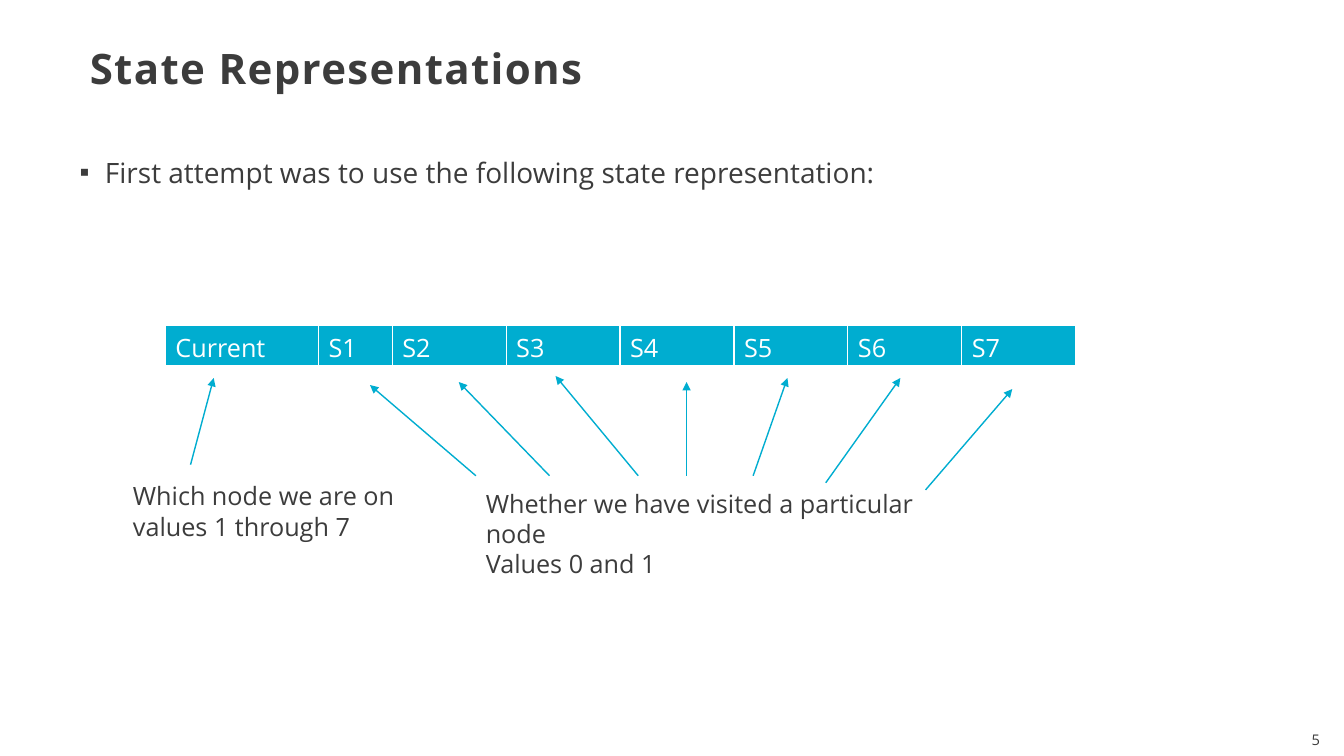
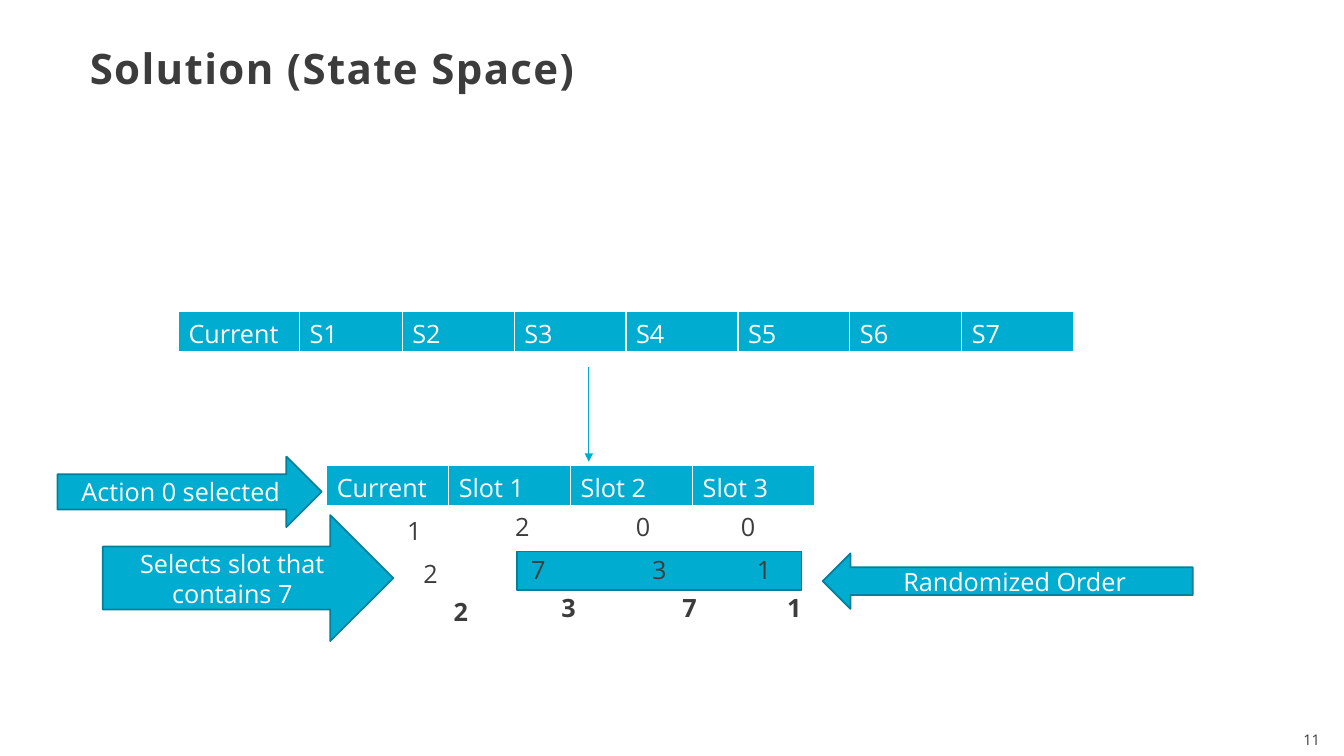
from collections import namedtuple
from dataclasses import dataclass

from lxml import etree
from pptx import Presentation
from pptx.dml.color import RGBColor
from pptx.enum.shapes import MSO_CONNECTOR, MSO_SHAPE
from pptx.enum.text import MSO_ANCHOR, MSO_AUTO_SIZE, PP_ALIGN
from pptx.oxml.ns import qn
from pptx.util import Inches, Pt

LEFT, CENTER, RIGHT = PP_ALIGN.LEFT, PP_ALIGN.CENTER, PP_ALIGN.RIGHT
MIDDLE, TOP = MSO_ANCHOR.MIDDLE, MSO_ANCHOR.TOP
NO_AUTOFIT = MSO_AUTO_SIZE.NONE
STRAIGHT = MSO_CONNECTOR.STRAIGHT
RECTANGLE = MSO_SHAPE.RECTANGLE
RIGHT_ARROW, LEFT_ARROW = MSO_SHAPE.RIGHT_ARROW, MSO_SHAPE.LEFT_ARROW
CONTENT_LAYOUT, TITLE_LAYOUT = 1, 5

Box = namedtuple("Box", "left top width height")


@dataclass(frozen=True)
class Theme:
    font: str = "Open Sans"
    ink: str = "3C3C3C"
    accent: str = "00ADD0"
    outline: str = "00809A"
    white: str = "FFFFFF"
    title_size: float = 30
    list_size: float = 20
    text_size: float = 18
    number_size: float = 10.5


THEME = Theme()
TITLE_BOX = Box(0.79, 0.47, 10.89, 0.49)
BODY_BOX = Box(0.79, 1.49, 11.73, 5.14)
NUMBER_BOX = Box(12.5, 7.2, 0.69, 0.29)
ROW_HEIGHT = 0.41
STATE_LABELS = ["Current"] + [f"S{node}" for node in range(1, 8)]
SLOT_LABELS = ["Current"] + [f"Slot {slot}" for slot in range(1, 4)]


def rgb(color):
    return RGBColor.from_string(color)


def inches(box):
    return [Inches(length) for length in box]


def move(shape, box):
    shape.left, shape.top, shape.width, shape.height = inches(box)


def style_text(frame, size=THEME.text_size, color=THEME.ink, bold=False, align=LEFT):
    for paragraph in frame.paragraphs:
        paragraph.alignment = align
        for run in paragraph.runs:
            run.font.name = THEME.font
            run.font.size = Pt(size)
            run.font.bold = bold
            run.font.color.rgb = rgb(color)


def add_text(slide, box, text, wrap=True, **style):
    frame = slide.shapes.add_textbox(*inches(box)).text_frame
    frame.word_wrap = wrap
    frame.text = text
    style_text(frame, **style)


def add_titled_slide(deck, layout, title, number):
    slide = deck.slides.add_slide(deck.slide_layouts[layout])
    heading = slide.shapes.title
    move(heading, TITLE_BOX)
    frame = heading.text_frame
    frame.text = title
    frame.auto_size = NO_AUTOFIT
    frame.vertical_anchor = MIDDLE
    frame.paragraphs[0].line_spacing = 0.85
    style_text(frame, THEME.title_size, bold=True)
    frame.paragraphs[0].runs[0].font._element.set("spc", "100")
    add_text(slide, NUMBER_BOX, str(number), size=THEME.number_size, align=RIGHT)
    return slide


def fill_bullets(slide, box, items):
    body = slide.placeholders[1]
    move(body, box)
    frame = body.text_frame
    frame.text = "\n".join(items)
    frame.auto_size = NO_AUTOFIT
    frame.vertical_anchor = TOP
    frame.margin_left = frame.margin_right = 0
    for index, paragraph in enumerate(frame.paragraphs):
        paragraph.space_before = Pt(12 if index else 0)
        paragraph.space_after = Pt(2)
        properties = paragraph._p.get_or_add_pPr()
        properties.set("marL", str(Inches(0.25)))
        properties.set("indent", str(-Inches(0.25)))
        etree.SubElement(properties, qn("a:buChar")).set("char", "▪")
    style_text(frame, THEME.list_size)


def add_cell_borders(cell):
    properties = cell._tc.get_or_add_tcPr()
    for side, width in (("L", 1), ("R", 1), ("T", 1), ("B", 3)):
        border = etree.SubElement(properties, qn(f"a:ln{side}"), w=str(Pt(width)))
        fill = etree.SubElement(border, qn("a:solidFill"))
        etree.SubElement(fill, qn("a:srgbClr"), val=THEME.white)


def add_state_row(slide, left, top, labels, widths):
    """Draw a one-row table with a column for each part of the state."""
    box = Box(left, top, sum(widths), ROW_HEIGHT)
    table = slide.shapes.add_table(1, len(labels), *inches(box)).table
    table.first_row = table.horz_banding = False
    for column, (label, width) in enumerate(zip(labels, widths)):
        table.columns[column].width = Inches(width)
        cell = table.cell(0, column)
        add_cell_borders(cell)
        cell.fill.solid()
        cell.fill.fore_color.rgb = rgb(THEME.accent)
        cell.text_frame.text = label
        style_text(cell.text_frame, color=THEME.white)
    return box


def add_pointer(slide, box, start, end):
    """Draw an arrow between two points measured from the corner of box."""
    ends = [origin + offset for point in (start, end) for origin, offset in zip(box, point)]
    pointer = slide.shapes.add_connector(STRAIGHT, *inches(ends))
    pointer.line.color.rgb = rgb(THEME.accent)
    pointer.line.width = Pt(1)
    etree.SubElement(pointer.line._get_or_add_ln(), qn("a:tailEnd"), type="triangle")
    etree.SubElement(pointer._element.spPr, qn("a:effectLst"))


def add_block(slide, kind, box, text=""):
    block = slide.shapes.add_shape(kind, *inches(box))
    block.shadow.inherit = False
    block.fill.solid()
    block.fill.fore_color.rgb = rgb(THEME.accent)
    block.line.color.rgb = rgb(THEME.outline)
    block.line.width = Pt(1.25)
    if text:
        frame = block.text_frame
        frame.word_wrap = True
        frame.vertical_anchor = MIDDLE
        frame.text = text
        style_text(frame, color=THEME.white, align=CENTER)


def explain_state(slide, row):
    """Point from the notes under the state row to its columns."""
    pointers = [
        ((0.25, 1.38), (0.48, 0.52)),
        ((3.08, 1.49), (2.03, 0.59)),
        ((3.81, 1.49), (2.91, 0.56)),
        ((4.69, 1.49), (3.87, 0.5)),
        ((5.17, 1.49), (5.17, 0.56)),
        ((5.83, 1.49), (6.17, 0.52)),
        ((6.55, 1.56), (7.29, 0.52)),
        ((7.54, 1.63), (8.4, 0.63)),
    ]
    for start, end in pointers:
        add_pointer(slide, row, start, end)
    add_text(slide, Box(row.left - 0.42, row.top + 1.49, 2.84, 0.71),
             "Which node we are on\nvalues 1 through 7")
    add_text(slide, Box(row.left + 3.08, row.top + 1.56, 4.56, 0.71),
             "Whether we have visited a particular node\nValues 0 and 1")


def add_slot_values(slide, row):
    """Write the three steps of slot values below the slot row."""
    add_block(slide, RECTANGLE, Box(row.left + 1.89, row.top + 0.85, 2.82, 0.38))
    steps = [(0.7, 0.44, "1200", False), (0.86, 0.87, "2731", False),
             (1.16, 1.25, "2371", True)]
    value_offsets = [(0, 0), (1.07, -0.04), (2.27, -0.04), (3.31, -0.04)]
    for left, top, values, bold in steps:
        for value, (across, down) in zip(values, value_offsets):
            box = Box(row.left + left + across, row.top + top + down, 0.33, 0.4)
            add_text(slide, box, value, wrap=False, bold=bold)


def add_slot_callouts(slide, row):
    callouts = [
        (LEFT_ARROW, (4.92, 0.87, 3.67, 0.55), "Randomized Order"),
        (RIGHT_ARROW, (-2.67, -0.09, 2.62, 0.7), "Action 0 selected"),
        (RIGHT_ARROW, (-2.22, 0.49, 2.88, 1.25), "Selects slot that contains 7"),
    ]
    for kind, (left, top, width, height), text in callouts:
        add_block(slide, kind, Box(row.left + left, row.top + top, width, height), text)


def build_representation_slide(deck):
    slide = add_titled_slide(deck, CONTENT_LAYOUT, "State Representations", 5)
    fill_bullets(slide, BODY_BOX,
                 ["First attempt was to use the following state representation:"])
    row = add_state_row(slide, 1.64, 3.23, STATE_LABELS, [1.52, 0.73] + [1.13] * 6)
    explain_state(slide, row)


def build_solution_slide(deck):
    slide = add_titled_slide(deck, TITLE_LAYOUT, "Solution (State Space)", 11)
    state_row = add_state_row(slide, 1.77, 3.09, STATE_LABELS, [1.2, 1.02] + [1.11] * 6)
    slot_row = add_state_row(slide, 3.24, 4.62, SLOT_LABELS, [1.21] * 4)
    add_pointer(slide, state_row, (4.07, 0.55), (4.07, 1.49))
    add_slot_values(slide, slot_row)
    add_slot_callouts(slide, slot_row)


def main():
    deck = Presentation()
    deck.slide_width, deck.slide_height = Inches(13.33), Inches(7.5)
    build_representation_slide(deck)
    build_solution_slide(deck)
    deck.save("out.pptx")


if __name__ == "__main__":
    main()
